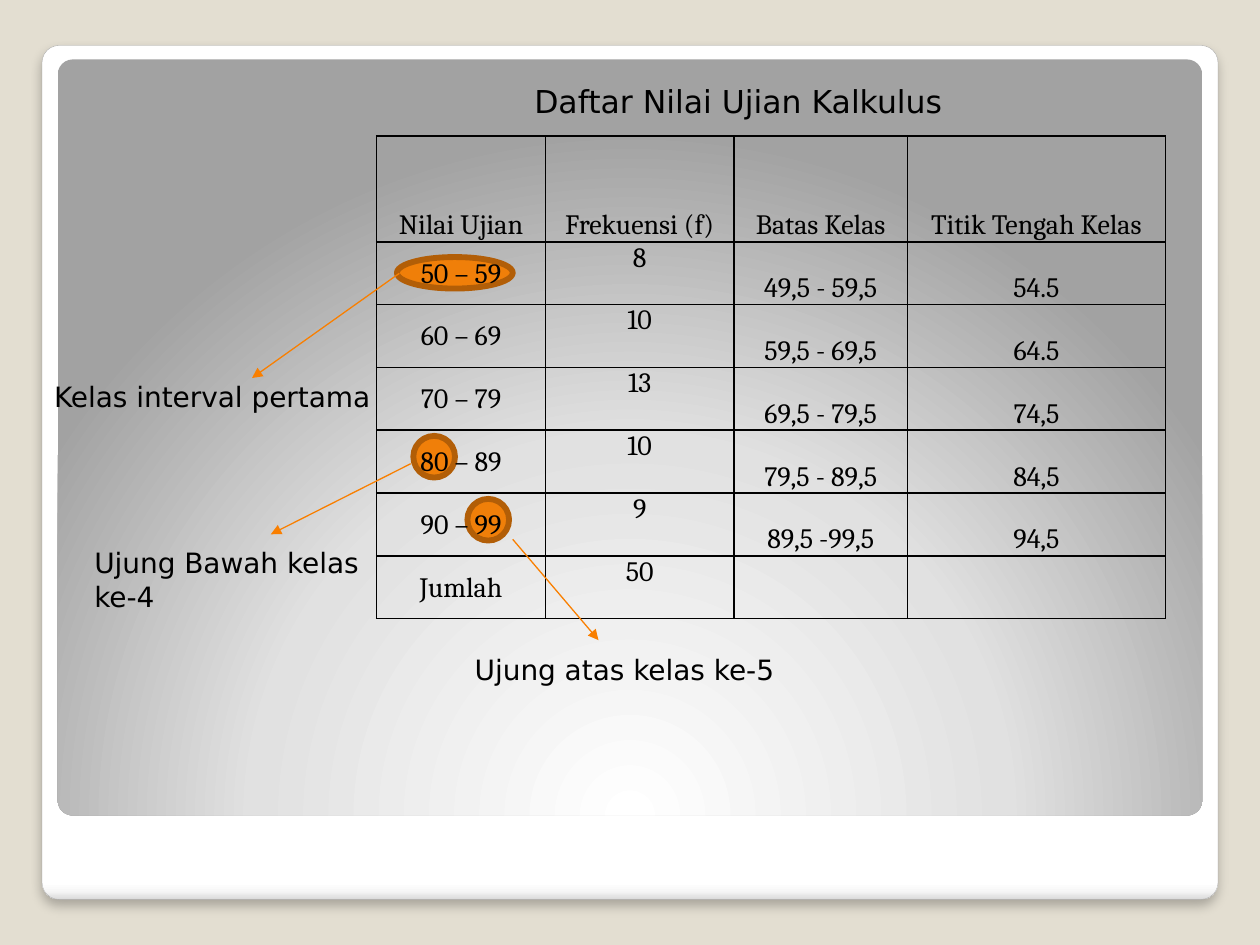
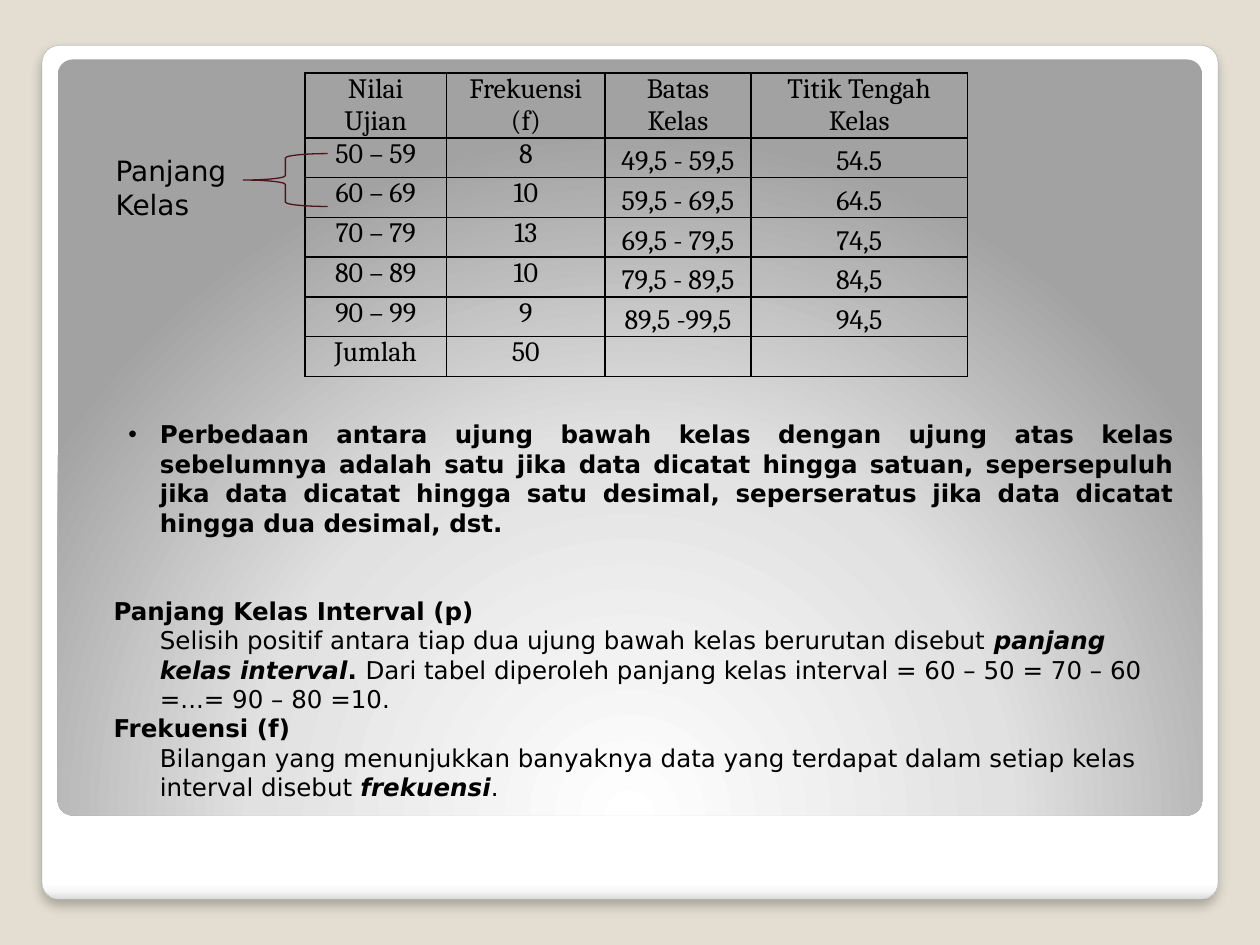
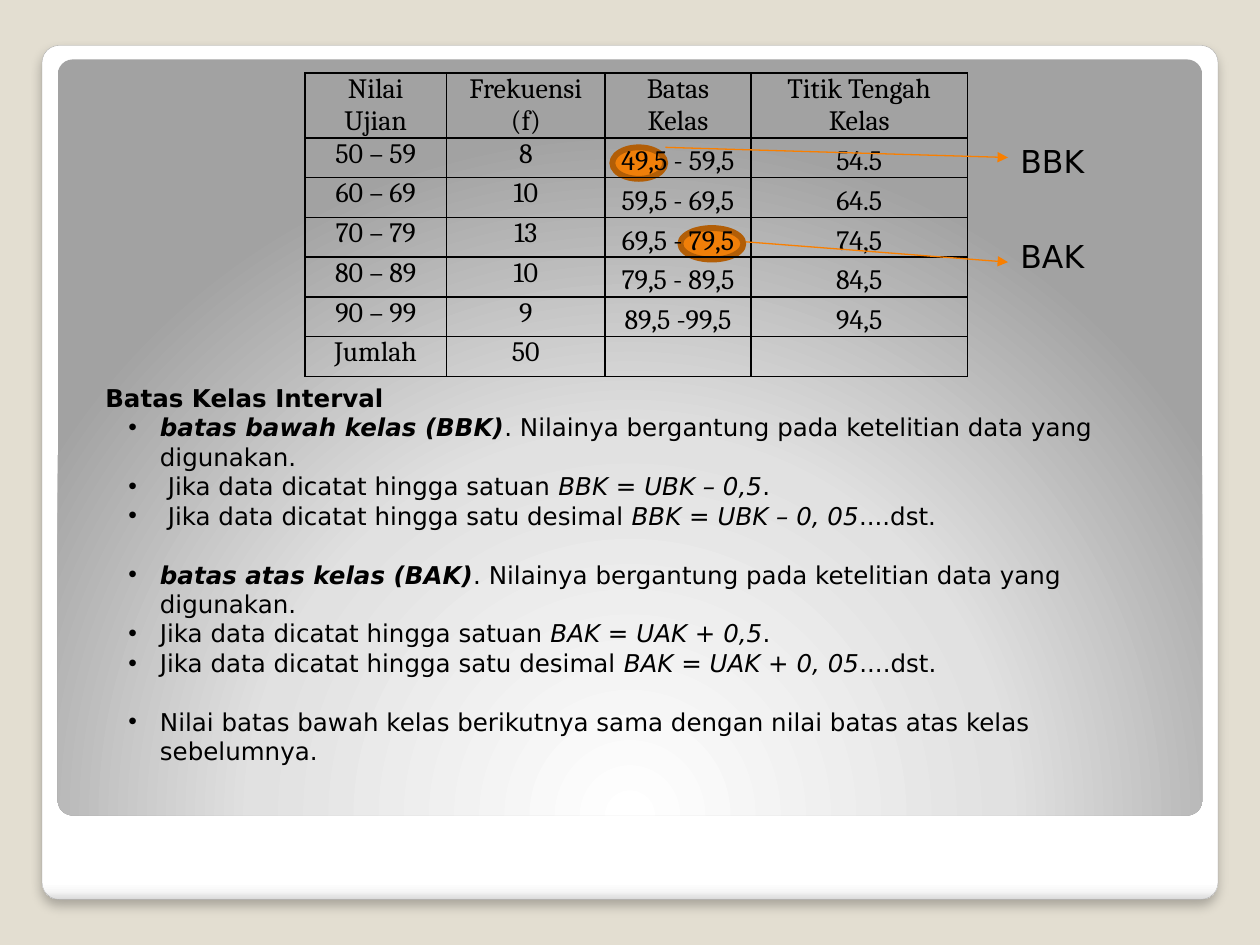
from dataclasses import dataclass

from pptx import Presentation
from pptx.dml.color import RGBColor as RGB
from pptx.enum.shapes import MSO_CONNECTOR as LINK, MSO_SHAPE as GEOM
from pptx.enum.text import MSO_ANCHOR as ANCHOR, MSO_AUTO_SIZE as FIT, PP_ALIGN as ALIGN
from pptx.oxml import parse_xml
from pptx.oxml.ns import nsdecls, qn
from pptx.util import Pt


@dataclass(frozen=True)
class Theme:
    back: str = "E3DED1"
    white: str = "FFFFFF"
    edge: str = "A4A4A4"
    ink: str = "000000"
    mark: str = "F07F09"
    rim: str = "B25E07"
    arrow: str = "F97F00"
    brace: str = "50141B"
    sans: str = "DejaVu Sans"
    serif: str = "Cambria"
    large: int = 18
    label: int = 16
    body: int = 14
    line: float = 0.75


T = Theme()
GAP = 16.8  # height of one body line
STEP = 36  # text indent of a list
HANG = -18
COLS = (0.214, 0.239, 0.22, 0.327)
DATA = [
    ("Nilai Ujian", "Frekuensi (f)", "Batas Kelas", "Titik Tengah Kelas"),
    ("50 – 59", "8", "49,5 - 59,5", "54.5"),
    ("60 – 69", "10", "59,5 - 69,5", "64.5"),
    ("70 – 79", "13", "69,5 - 79,5", "74,5"),
    ("80 – 89", "10", "79,5 - 89,5", "84,5"),
    ("90 – 99", "9", "89,5 -99,5", "94,5"),
    ("Jumlah", "50", "", ""),
]
WIDE = (215.2, 77.8, 450.8, 275.8)
SMALL = (174.2, 41.8, 378.8, 173.4)


def xml(text):
    """Parse a fragment whose first tag is in the drawing namespace."""
    tag, rest = text.split(" ", 1)
    return parse_xml(f"{tag} {nsdecls('a')} {rest}")


def style(font, size, face=T.sans):
    font.size, font.name = Pt(size), face
    font.color.rgb = RGB.from_string(T.ink)


def shift(box, part):
    """Move a part's offsets to the origin of its box."""
    return (box[0] + part[0], box[1] + part[1], *part[2:])


def shape(slide, geom, box, fill=None, line=None, width=T.line):
    item = slide.shapes.add_shape(geom, *map(Pt, box))
    item.shadow.inherit = False
    if fill:
        item.fill.solid()
        item.fill.fore_color.rgb = RGB.from_string(fill)
    if line:
        item.line.color.rgb = RGB.from_string(line)
        item.line.width = Pt(width)
    else:
        item.line.fill.background()
    return item


def shade(item, stops, kind):
    colors = "".join(
        f'<a:gs pos="{pos * 1000}"><a:srgbClr val="{color}"/></a:gs>'
        for pos, color in stops)
    fill = xml(f'<a:gradFill rotWithShape="1"><a:gsLst>{colors}</a:gsLst>{kind}</a:gradFill>')
    item.element.spPr.find(qn("a:prstGeom")).addnext(fill)


def frame(deck, slide):
    """Put the background, card and panel on the slide master."""
    master = deck.slide_master
    master.background.fill.solid()
    master.background.fill.fore_color.rgb = RGB.from_string(T.back)

    card = shape(slide, GEOM.ROUNDED_RECTANGLE, (24, 26, 672, 488), line=T.edge, width=0.16)
    shade(card, [(0, T.white), (98, T.white), (99, "F7F7F7"), (100, "DADADA")],
          '<a:lin ang="5400000" scaled="0"/>')
    card.element.spPr.find(qn("a:effectLst")).append(xml(
        f'<a:outerShdw blurRad="{Pt(6)}" dist="{Pt(4)}" dir="5400000" algn="t" rotWithShape="0">'
        f'<a:srgbClr val="{T.ink}"><a:alpha val="25000"/></a:srgbClr></a:outerShdw>'))

    panel = shape(slide, GEOM.ROUNDED_RECTANGLE, (33, 34, 654, 432))
    shade(panel, [(0, T.white), (55, "E1E1E1"), (100, "A2A2A2")],
          '<a:path path="circle"><a:fillToRect l="50000" t="175000" r="50000" b="-75000"/></a:path>')

    for spot, item in enumerate((card, panel)):
        item.adjustments[0] = 0.02
        item.element.xpath(".//p:cNvPr")[0].set("id", str(100 + spot))
        master.shapes.element.insert(2 + spot, item.element)


def mark(slide, box):
    shape(slide, GEOM.OVAL, box, T.mark, T.rim, 3.35)


def arrow(slide, start, end):
    link = slide.shapes.add_connector(LINK.STRAIGHT, *map(Pt, (*start, *end)))
    link.line.color.rgb = RGB.from_string(T.arrow)
    link.line.width = Pt(T.line)
    prop = link.element.spPr
    prop.find(qn("a:ln")).append(xml('<a:tailEnd type="triangle"/>'))
    prop.append(xml("<a:effectLst />"))


def label(slide, box, text, size=T.label):
    item = slide.shapes.add_textbox(*map(Pt, box))
    item.text_frame.word_wrap = False
    item.text_frame.auto_size = FIT.SHAPE_TO_FIT_TEXT
    item.text_frame.text = text
    for para in item.text_frame.paragraphs:
        style(para.runs[0].font, size)


def place(item, box):
    item.left, item.top, item.width, item.height = map(Pt, box)
    item.text_frame.vertical_anchor = ANCHOR.TOP
    item.text_frame.auto_size = FIT.NONE


def title(slide, box, text):
    item = slide.shapes.title
    place(item, box)
    item.text_frame.word_wrap = False
    item.text_frame.text = text
    para = item.text_frame.paragraphs[0]
    para.alignment = ALIGN.LEFT
    style(para.runs[0].font, T.large)


def grid(slide, box, head, lead=1.0):
    """Draw the score table; lead is the line spacing of its first column."""
    item = slide.shapes.add_table(len(DATA), len(COLS), *map(Pt, box))
    table = item.table
    table.first_row = table.horz_banding = False
    for col, part in zip(table.columns, COLS):
        col.width = Pt(round(box[2] * part, 2))
    rest = round((box[3] - head) / (len(DATA) - 1), 2)
    for r, row in enumerate(DATA):
        table.rows[r].height = Pt(rest if r else head)
        for c, text in enumerate(row):
            cell = table.cell(r, c)
            cell.margin_left = cell.margin_right = Pt(5)
            cell.margin_top = cell.margin_bottom = 0
            cell.vertical_anchor = ANCHOR.BOTTOM if r == 0 or c > 1 else ANCHOR.TOP
            cell.fill.background()
            cell.text_frame.text = text
            para = cell.text_frame.paragraphs[0]
            para.alignment = ALIGN.CENTER
            para.line_spacing = lead if c == 0 else 1.0
            style(para.font, T.label, T.serif)
            for run in para.runs:
                style(run.font, T.label, T.serif)
    for prop in item.element.iter(qn("a:tcPr")):
        for spot, side in enumerate("LRTB"):
            prop.insert(spot, xml(
                f'<a:ln{side} w="{Pt(1)}"><a:solidFill><a:srgbClr val="{T.ink}"/>'
                f'</a:solidFill></a:ln{side}>'))


@dataclass(frozen=True)
class Para:
    runs: tuple  # (text, flags) pairs: b is bold, i is italic
    left: float = STEP
    first: float = 0
    bullet: bool = False
    before: float = 0
    align: ALIGN = ALIGN.LEFT


def head(text, left, before=0):
    return Para(((text, "b"),), left, before=before)


def point(*runs, nudge=0, **more):
    """A bulleted line; nudge moves its text but not its bullet."""
    return Para(runs, STEP + nudge, HANG - nudge, True, **more)


def prose(slide, box, paras):
    item = slide.placeholders[1]
    place(item, box)
    text = item.text_frame
    for n, data in enumerate(paras):
        para = text.add_paragraph() if n else text.paragraphs[0]
        para.level = 1 if data.left >= STEP else 0
        para.alignment = data.align
        para.space_before = Pt(data.before)
        prop = para._p.get_or_add_pPr()
        prop.set("marL", str(Pt(data.left)))
        prop.set("indent", str(Pt(data.first)))
        prop.append(xml('<a:buChar char="•"/>' if data.bullet else "<a:buNone />"))
        for words, flags in data.runs:
            run = para.add_run()
            run.text = words
            style(run.font, T.body)
            run.font.bold, run.font.italic = "b" in flags, "i" in flags
    name = slide.shapes.title.element
    name.getparent().remove(name)


def ends(slide, box):
    """Table with the ends of its classes pointed out."""
    for part in ((51.9, 207.3, 23.8, 23.8), (21, 171.3, 23.8, 23.8), (11.6, 69.1, 66.2, 18)):
        mark(slide, shift(box, part))
    title(slide, shift(box, (82.9, -34.6, 253.4, 28.8)), "Daftar Nilai Ujian Kalkulus")
    grid(slide, box, 60.4, 1.5)
    for start, end, spot, text in (
        ((13, 78.4), (-71.2, 138.2), (-191.4, 135.3, 198, 26.6), "Kelas interval pertama"),
        ((19.5, 187.2), (-60.4, 227.5), (-168.4, 230.4, 175, 46), "Ujung Bawah kelas\nke-4"),
        ((77.8, 230.4), (126.8, 288), (49, 291.6, 192.2, 26.6), "Ujung atas kelas ke-5"),
    ):
        arrow(slide, shift(box, start), shift(box, end))
        label(slide, shift(box, spot), text)


def width(slide, box):
    """Table with the class width, and its definitions."""
    grid(slide, box, 37)
    prose(slide, shift(box, (-126, 194.2, 630, 240)), [
        point(("Perbedaan antara ujung bawah kelas dengan ujung atas kelas sebelumnya "
               "adalah satu jika data dicatat hingga satuan, sepersepuluh jika data dicatat "
               "hingga satu desimal, seperseratus jika data dicatat hingga dua desimal, dst.",
               "b"), align=ALIGN.JUSTIFY),
        head("Panjang Kelas Interval (p)", 9.5, 2 * GAP),
        Para((("Selisih positif antara tiap dua ujung bawah kelas berurutan disebut ", ""),
              ("panjang kelas interval", "bi"), (". ", "b"),
              ("Dari tabel diperoleh panjang kelas interval = 60 – 50 = 70 – 60 "
               "=...= 90 – 80 =10.", ""))),
        head("Frekuensi (f)", 9.5),
        Para((("Bilangan yang menunjukkan banyaknya data yang terdapat dalam setiap "
               "kelas interval disebut ", ""), ("frekuensi", "bi"), (".", ""))),
    ])
    brace = shape(slide, GEOM.LEFT_BRACE, shift(box, (-35.2, 46, 48.2, 30.2)), line=T.brace)
    brace.fill.background()
    label(slide, shift(box, (-115.2, 42.4, 85, 46)), "Panjang\nKelas")


def limits(slide, box):
    """Table with two class limits, and the rules for them."""
    for part in ((214.6, 88.5, 36, 18), (175.7, 42.4, 30.2, 18)):
        mark(slide, shift(box, part))
    grid(slide, box, 37)
    paras = [head("Batas Kelas Interval", 4.8)]
    for name, rule, nudge, before in (("batas bawah kelas (BBK)", "BBK = UBK – 0", 4.5, 0),
                                      ("batas atas kelas (BAK)", "BAK = UAK + 0", 0, GAP)):
        paras += [
            point((name, "bi"), (". Nilainya bergantung pada ketelitian data yang digunakan.", ""),
                  before=before),
            point(("Jika data dicatat hingga satuan ", ""), (f"{rule},5", "i"), (".", ""),
                  nudge=nudge),
            point(("Jika data dicatat hingga satu desimal ", ""), (f"{rule}, 05", "i"),
                  ("....dst.", ""), nudge=nudge),
        ]
    paras.append(point(("Nilai batas bawah kelas berikutnya sama dengan nilai batas atas "
                        "kelas sebelumnya.", ""), before=GAP))
    prose(slide, shift(box, (-126, 173.5, 630, 250)), paras)
    for start, end, top, text in (((206, 42.4), (401.8, 48.2), 36, "BBK"),
                                  ((252, 96.4), (401.8, 108), 90, "BAK")):
        arrow(slide, shift(box, start), shift(box, end))
        label(slide, shift(box, (401.8, top, 51.8, 28.8)), text, T.large)


def main():
    deck = Presentation()
    deck.slide_width, deck.slide_height = Pt(720), Pt(540)
    for n, (build, layout, box) in enumerate(((ends, 5, WIDE), (width, 1, SMALL),
                                              (limits, 1, SMALL))):
        slide = deck.slides.add_slide(deck.slide_layouts[layout])
        if n == 0:
            frame(deck, slide)
        build(slide, box)
    deck.save("out.pptx")


if __name__ == "__main__":
    main()
